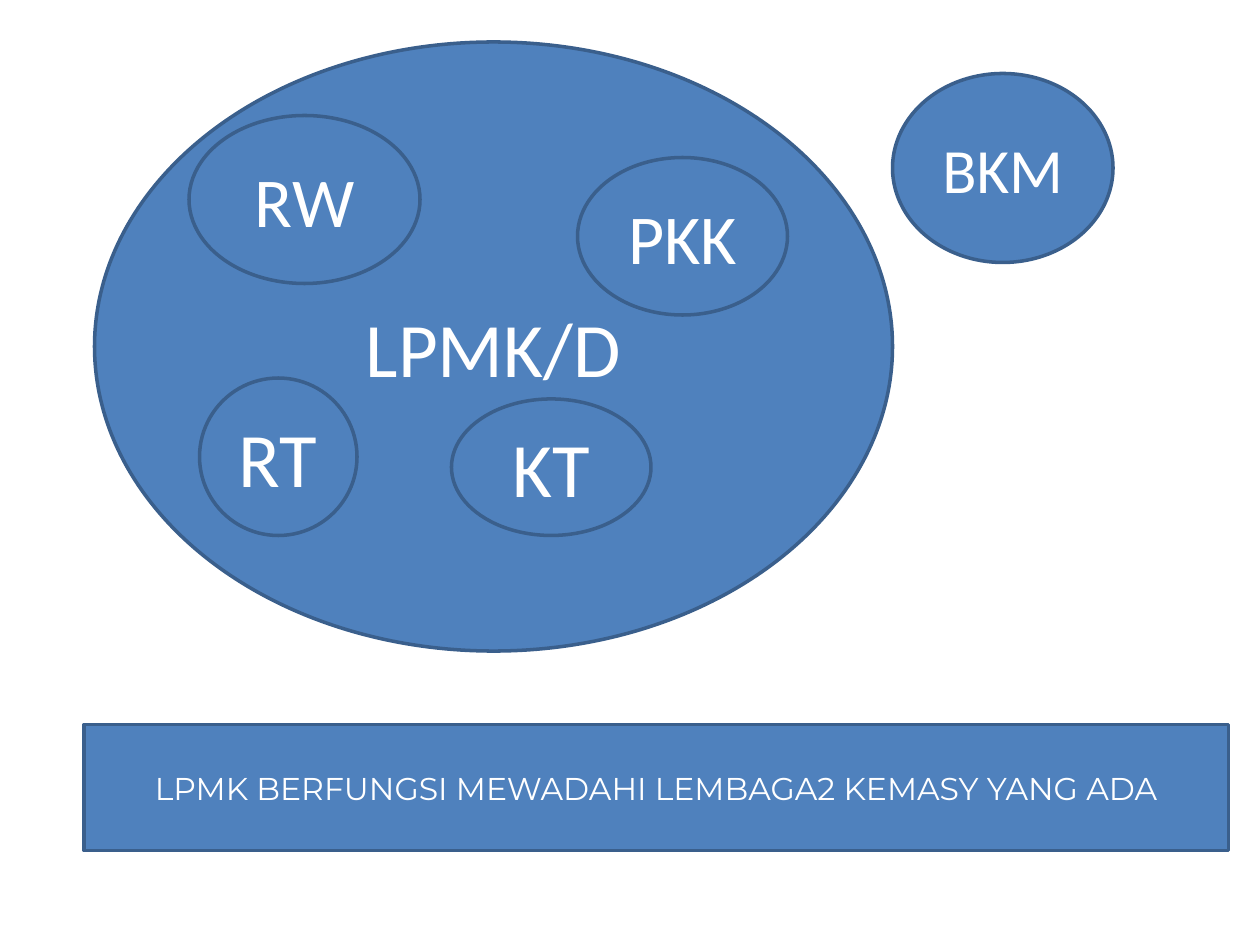
import pptx
import pptx.util
import pptx.dml.color
import pptx.enum.shapes
import pptx.enum.text

PX = 9525
COLORS = {"fill": "4F81BD", "line": "3A5F8C", "text": "FFFFFF"}
rgb = {name: pptx.dml.color.RGBColor.from_string(c) for name, c in COLORS.items()}
OVAL = pptx.enum.shapes.MSO_SHAPE.OVAL
RECT = pptx.enum.shapes.MSO_SHAPE.RECTANGLE

prs = pptx.Presentation()
prs.slide_width = 960 * PX
prs.slide_height = 720 * PX
s = prs.slides.add_slide(prs.slide_layouts[6])

shapes = [
    (OVAL, 72, 32, 608, 464, "LPMK/D", 44, "Calibri"),
    (OVAL, 680, 56, 168, 144, "BKM", 36, "Calibri"),
    (RECT, 64, 552, 872, 96, "LPMK BERFUNGSI MEWADAHI LEMBAGA2 KEMASY YANG ADA", 18, "Montserrat"),
    (OVAL, 344, 304, 152, 104, "KT", 44, "Calibri"),
    (OVAL, 152, 288, 120, 120, "RT", 44, "Calibri"),
    (OVAL, 440, 120, 160, 120, "PKK", 40, "Calibri"),
    (OVAL, 144, 88, 176, 128, "RW", 40, "Calibri"),
]

for kind, x, y, w, h, text, size, font in shapes:
    sp = s.shapes.add_shape(kind, x * PX, y * PX, w * PX, h * PX)
    sp.shadow.inherit = False
    sp.fill.solid()
    sp.fill.fore_color.rgb = rgb["fill"]
    sp.line.color.rgb = rgb["line"]
    sp.line.width = pptx.util.Pt(2)
    tf = sp.text_frame
    tf.word_wrap = True
    tf.vertical_anchor = pptx.enum.text.MSO_ANCHOR.MIDDLE
    p = tf.paragraphs[0]
    p.text = text
    p.alignment = pptx.enum.text.PP_ALIGN.CENTER
    p.font.name = font
    p.font.size = pptx.util.Pt(size)
    p.font.color.rgb = rgb["text"]

prs.save("out.pptx")
